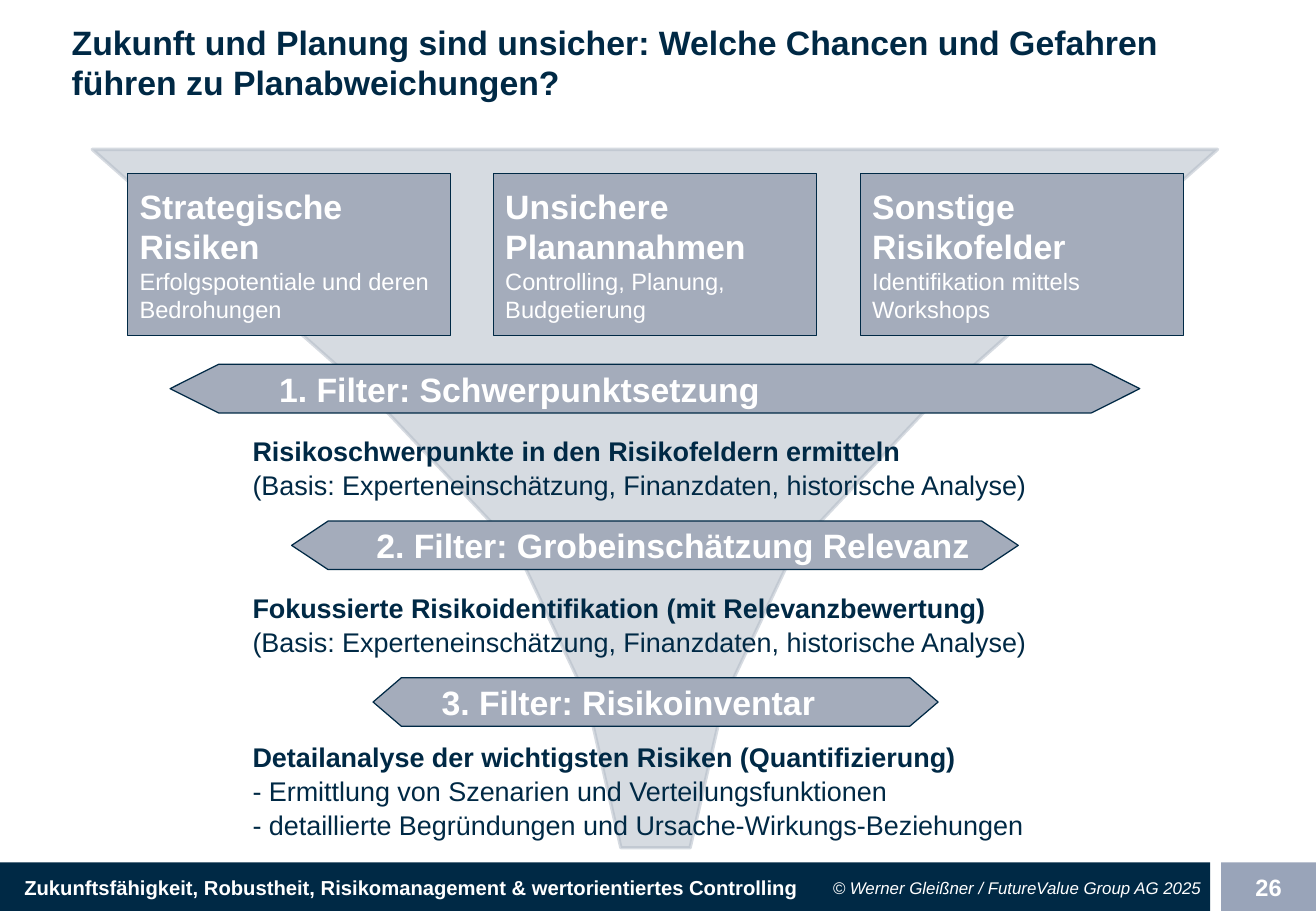
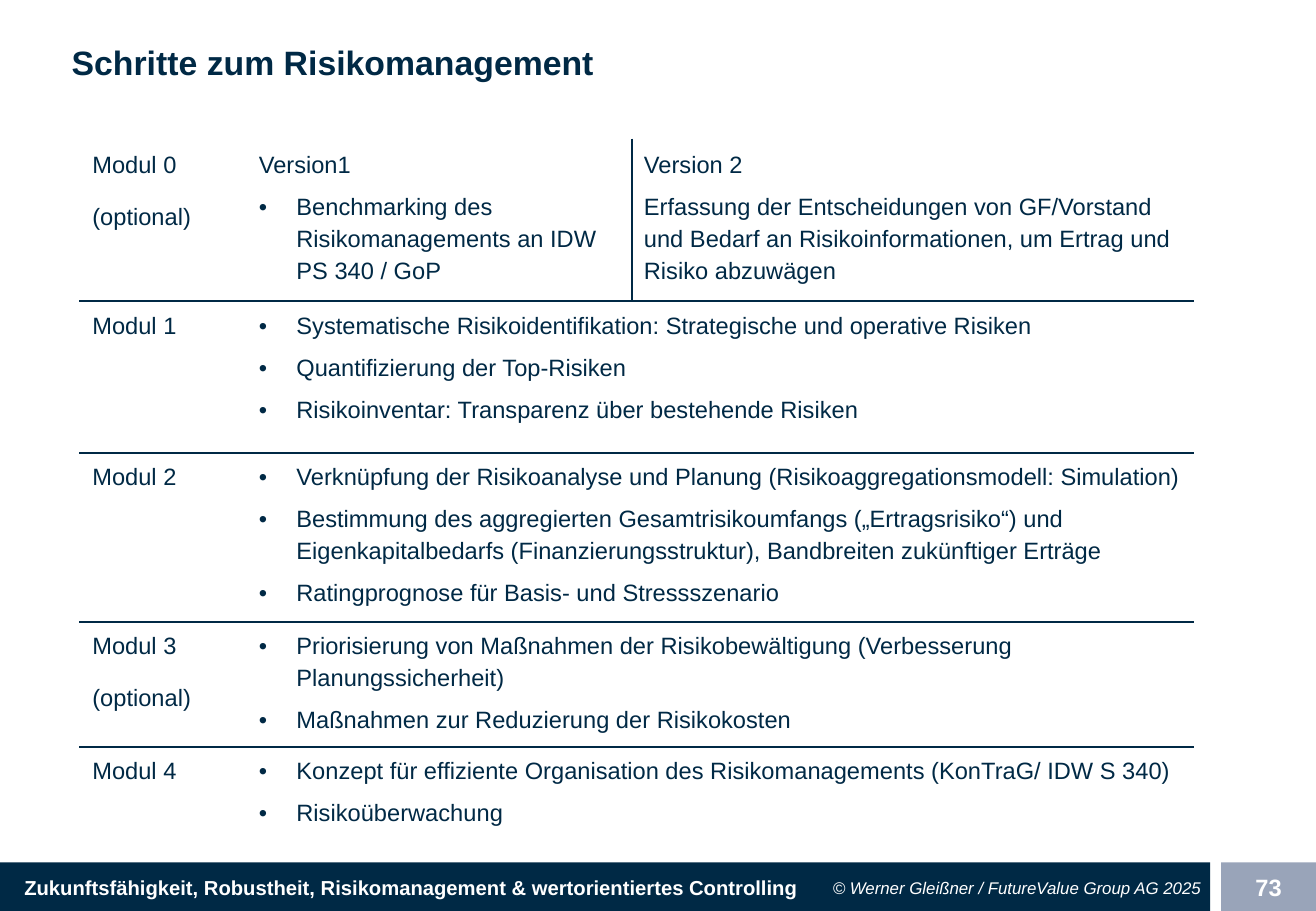
from itertools import pairwise

from lxml import etree
from pptx import Presentation
from pptx.dml.color import RGBColor
from pptx.enum.shapes import MSO_SHAPE
from pptx.enum.text import MSO_ANCHOR, PP_ALIGN
from pptx.oxml.ns import qn
from pptx.util import Pt

PX = 9144
FONT = "Arial"
NAVY = RGBColor(0x00, 0x29, 0x45)
WHITE = RGBColor(0xFF, 0xFF, 0xFF)
PAGE_GREY = RGBColor(0x99, 0xA4, 0xB9)
BOX_GREY = RGBColor(0xA4, 0xAC, 0xBB)
FUNNEL_GREY = RGBColor(0xAF, 0xB8, 0xC4)
RECT = MSO_SHAPE.RECTANGLE
HEXAGON = MSO_SHAPE.HEXAGON
MIDDLE = MSO_ANCHOR.MIDDLE
LEFT, CENTER, RIGHT = PP_ALIGN.LEFT, PP_ALIGN.CENTER, PP_ALIGN.RIGHT

FOOTER = "Zukunftsfähigkeit, Robustheit, Risikomanagement & wertorientiertes Controlling"
COPYRIGHT = "© Werner Gleißner / FutureValue Group AG 2025"
BASIS = "(Basis: Experteneinschätzung, Finanzdaten, historische Analyse)"

FUNNEL_LEVELS = [(123, 76, 1002), (328, 308, 771), (452, 425, 654), (575, 483, 596), (698, 511, 568)]
RISK_FIELDS = [
    ("Strategische\nRisiken", "Erfolgspotentiale und deren Bedrohungen"),
    ("Unsichere Planannahmen", "Controlling, Planung, Budgetierung"),
    ("Sonstige Risikofelder", "Identifikation mittels Workshops"),
]
FILTERS = [
    (798, 0.995, "1. Filter: Schwerpunktsetzung", 79,
     "Risikoschwerpunkte in den Risikofeldern ermitteln\n" + BASIS),
    (598, 0.75, "2. Filter: Grobeinschätzung Relevanz", 79,
     "Fokussierte Risikoidentifikation (mit Relevanzbewertung)\n" + BASIS),
    (465, 0.583, "3. Filter: Risikoinventar", 95,
     "Detailanalyse der wichtigsten Risiken (Quantifizierung)\n"
     "- Ermittlung von Szenarien und Verteilungsfunktionen\n"
     "- detaillierte Begründungen und Ursache-Wirkungs-Beziehungen"),
]

COLUMNS = [137, 317, 462]
HEADER_HEIGHT = 36
MODULES = [
    (132, ["Modul 0", "(optional)"],
     ["Version1", "• Benchmarking des Risikomanagements an IDW PS 340 / GoP"],
     ["Version 2", "Erfassung der Entscheidungen von GF/Vorstand und Bedarf an "
      "Risikoinformationen, um Ertrag und Risiko abzuwägen"]),
    (125, ["Modul 1"],
     ["• Systematische Risikoidentifikation: Strategische und operative Risiken",
      "• Quantifizierung der Top-Risiken",
      "• Risikoinventar: Transparenz über bestehende Risiken"], None),
    (139, ["Modul 2"],
     ["• Verknüpfung der Risikoanalyse und Planung (Risikoaggregationsmodell: Simulation)",
      "• Bestimmung des aggregierten Gesamtrisikoumfangs („Ertragsrisiko“) und "
      "Eigenkapitalbedarfs (Finanzierungsstruktur), Bandbreiten zukünftiger Erträge",
      "• Ratingprognose für Basis- und Stressszenario"], None),
    (103, ["Modul 3", "(optional)"],
     ["• Priorisierung von Maßnahmen der Risikobewältigung (Verbesserung Planungssicherheit)",
      "• Maßnahmen zur Reduzierung der Risikokosten"], None),
    (74, ["Modul 4"],
     ["• Konzept für effiziente Organisation des Risikomanagements (KonTraG/ IDW S 340)",
      "• Risikoüberwachung"], None),
]


def emu(*lengths):
    return [n * PX for n in lengths]


def style_runs(p, size, color, bold=False, italic=False):
    for r in p.runs:
        f = r.font
        f.name, f.size, f.bold, f.italic = FONT, Pt(size), bold, italic
        f.color.rgb = color


def set_text(sp, text, size, color, bold=False, italic=False, align=LEFT, wrap=True, margins=(10, 5, 10, 5)):
    tf = sp.text_frame
    tf.word_wrap = wrap
    tf.vertical_anchor = MIDDLE
    tf.margin_left, tf.margin_top, tf.margin_right, tf.margin_bottom = emu(*margins)
    p = tf.paragraphs[0]
    p.text = text
    p.alignment = align
    style_runs(p, size, color, bold, italic)
    return p


def add_box(s, kind, box, fill, outline=None):
    sp = s.shapes.add_shape(kind, *emu(*box))
    sp.shadow.inherit = False
    sp.fill.solid()
    sp.fill.fore_color.rgb = fill
    if outline is None:
        sp.line.fill.background()
    else:
        sp.line.color.rgb = outline
        sp.line.width = Pt(0.75)
    return sp


def add_label(s, box, text, size, color, **options):
    return set_text(s.shapes.add_textbox(*emu(*box)), text, size, color, **options)


def add_base_slide(prs, title, number):
    s = prs.slides.add_slide(prs.slide_layouts[6])
    narrow = (8, 4, 8, 4)
    bar = add_box(s, RECT, (0, 710, 996, 41), NAVY)
    set_text(bar, FOOTER, 12, WHITE, bold=True, wrap=False, margins=(20, 4, 8, 4))
    page = add_box(s, RECT, (1005, 710, 78, 41), PAGE_GREY)
    set_text(page, number, 14, WHITE, bold=True, align=CENTER, margins=narrow)
    add_label(s, (563, 710, 433, 41), COPYRIGHT, 10, WHITE, italic=True, align=RIGHT, margins=narrow)
    add_label(s, (51, 16, 945, 70), title, 20, NAVY, bold=True, margins=narrow)
    return s


def add_funnel_part(s, upper, lower):
    (top, top_left, top_right), (bottom, bottom_left, bottom_right) = upper, lower
    builder = s.shapes.build_freeform(top_left, top, scale=PX)
    builder.add_line_segments([(bottom_left, bottom), (bottom_right, bottom), (top_right, top)], close=True)
    sp = builder.convert_to_shape()
    sp.shadow.inherit = False
    sp.fill.solid()
    sp.fill.fore_color.rgb = FUNNEL_GREY
    sp.line.color.rgb = FUNNEL_GREY
    sp.line.width = Pt(2)
    for color in sp._element.spPr.iter(qn("a:srgbClr")):
        etree.SubElement(color, qn("a:alpha"), val="50000")


def add_risk_field(s, left, heading, detail):
    sp = add_box(s, RECT, (left, 143, 266, 133), BOX_GREY, NAVY)
    set_text(sp, heading, 20, WHITE, bold=True)
    p = sp.text_frame.add_paragraph()
    p.text = detail
    p.alignment = LEFT
    style_runs(p, 14, WHITE)


def add_filter(s, top, width, tip, heading, text_height, text):
    p = add_label(s, (198, top + 45, 736, text_height), text, 16, NAVY)
    p.line_spacing = 1.05
    p.runs[0].font.bold = True
    sp = add_box(s, HEXAGON, ((1079 - width) // 2, top, width, 40), BOX_GREY, NAVY)
    sp.adjustments[0] = tip
    set_text(sp, heading, 20, WHITE, bold=True, wrap=False)


def set_borders(cell, lines):
    tcPr = cell._tc.get_or_add_tcPr()
    for side in "LRTB":
        color, width = lines.get(side, (WHITE, 1))
        ln = etree.SubElement(tcPr, qn("a:ln" + side), w=str(Pt(width)))
        fill = etree.SubElement(ln, qn("a:solidFill"))
        etree.SubElement(fill, qn("a:srgbClr"), val=str(color))
    cell.fill.background()


def fill_cell(cell, lines, space_before):
    tf = cell.text_frame
    for i, line in enumerate(lines):
        p = tf.add_paragraph() if i else tf.paragraphs[0]
        if line.startswith("• "):
            pPr = p._p.get_or_add_pPr()
            pPr.set("marL", str(31 * PX))
            pPr.set("indent", str(-31 * PX))
            etree.SubElement(pPr, qn("a:buFont"), typeface=FONT)
            etree.SubElement(pPr, qn("a:buChar"), char="•")
        p.text = line.removeprefix("• ")
        p.line_spacing = 1.2
        p.space_before = Pt(space_before if i else 0)
        p.space_after = Pt(6)
        style_runs(p, 14, NAVY)


def add_header_row(table):
    table.rows[0].height = HEADER_HEIGHT * PX
    cells = list(table.rows[0].cells)
    for cell in cells:
        cell.margin_top = cell.margin_bottom = 0
        set_borders(cell, {"B": (WHITE, 3)})
    cells[0].merge(cells[-1])


def add_module_table(s):
    height = HEADER_HEIGHT + sum(module[0] for module in MODULES)
    frame = s.shapes.add_table(len(MODULES) + 1, len(COLUMNS), *emu(66, 80, sum(COLUMNS), height))
    table = frame.table
    table.first_row = table.horz_banding = False
    for column, width in zip(table.columns, COLUMNS):
        column.width = width * PX
    add_header_row(table)
    rule = (NAVY, 1)
    last = len(MODULES)
    for i, (row_height, name, content, second) in enumerate(MODULES, 1):
        table.rows[i].height = row_height * PX
        cells = list(table.rows[i].cells)
        rules = {"T": rule if i > 1 else (WHITE, 3), "B": rule if i < last else (WHITE, 1)}
        dividers = ({}, {"R": rule}, {"L": rule}) if second else ({}, {}, {})
        for cell, divider in zip(cells, dividers):
            set_borders(cell, rules | divider)
        fill_cell(cells[0], name, 6)
        fill_cell(cells[1], content, 0)
        if second:
            fill_cell(cells[2], second, 0)
        else:
            cells[1].merge(cells[2])


def add_funnel_slide(prs):
    title = "Zukunft und Planung sind unsicher: Welche Chancen und Gefahren führen zu Planabweichungen?"
    s = add_base_slide(prs, title, "26")
    for upper, lower in pairwise(FUNNEL_LEVELS):
        add_funnel_part(s, upper, lower)
    for i, step in enumerate(FILTERS):
        add_filter(s, 300 + 129 * i, *step)
    for i, field in enumerate(RISK_FIELDS):
        add_risk_field(s, 105 + 603 * i // 2, *field)


def main():
    prs = Presentation()
    prs.slide_width, prs.slide_height = emu(1083, 750)
    add_funnel_slide(prs)
    add_module_table(add_base_slide(prs, "Schritte zum Risikomanagement", "73"))
    prs.save("out.pptx")


if __name__ == "__main__":
    main()
